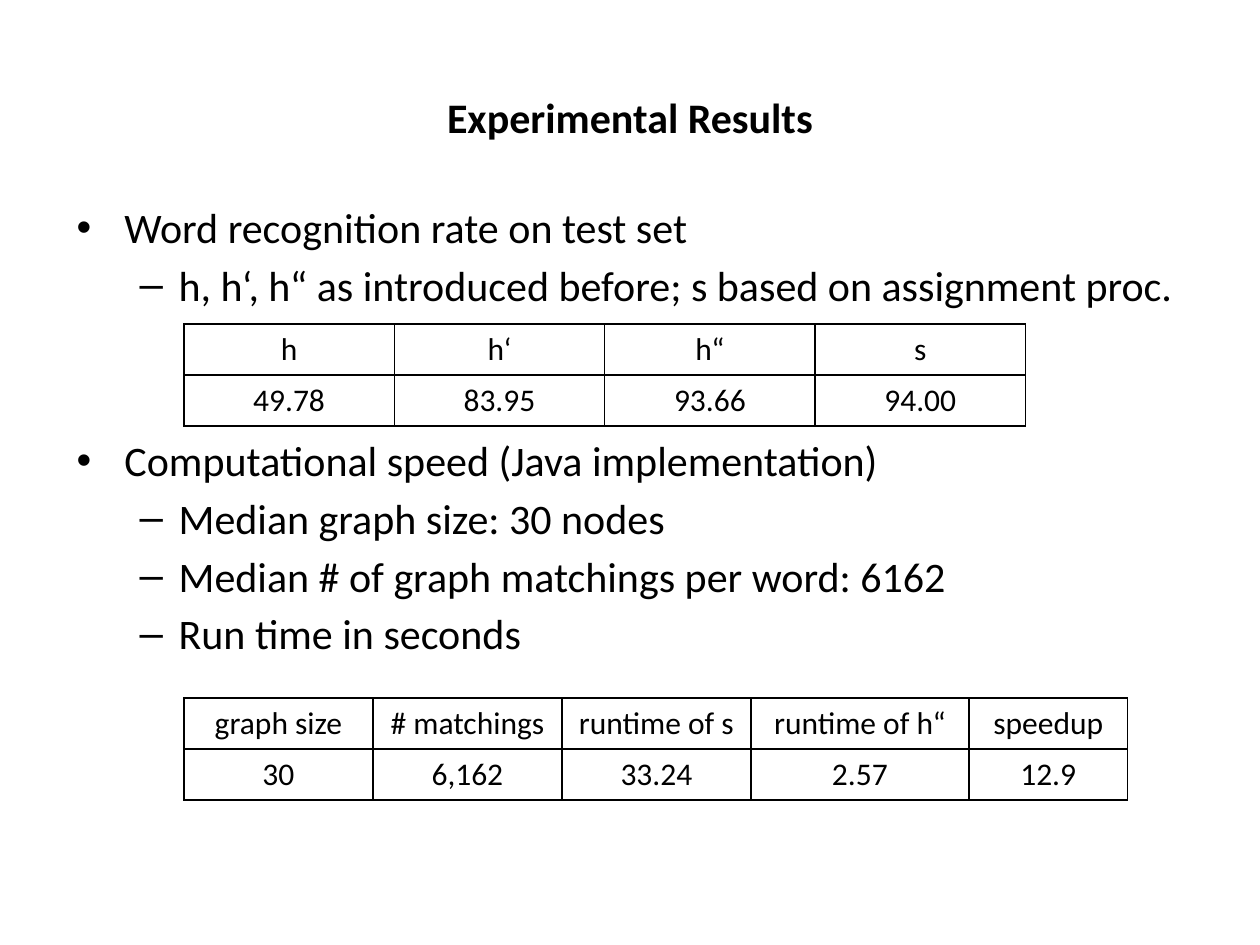
from pptx import Presentation
from pptx.dml.color import RGBColor
from pptx.enum.text import MSO_ANCHOR, PP_ALIGN
from pptx.oxml.ns import qn
from pptx.util import Inches, Pt
from lxml.etree import SubElement

COLORS = {"text": "000000", "border": "000000", "background": "FFFFFF"}
FONT = "Calibri"
BULLETS = [("•", 0.38, 0.38), ("–", 0.81, 0.31)]
LINE_GAP = 4.25
TABLE_GAP = 71.25
OUTLINE = [
    (0, "Word recognition rate on test set", LINE_GAP),
    (1, "h, h‘, h“ as introduced before; s based on assignment proc.", LINE_GAP),
    (0, "Computational speed (Java implementation)", TABLE_GAP),
    (1, "Median graph size: 30 nodes", LINE_GAP),
    (1, "Median # of graph matchings per word: 6162", LINE_GAP),
    (1, "Run time in seconds", LINE_GAP),
]
RECOGNITION_RATES = [["h", "h‘", "h“", "s"], ["49.78", "83.95", "93.66", "94.00"]]
RUN_TIMES = [
    ["graph size", "# matchings", "runtime of s", "runtime of h“", "speedup"],
    ["30", "6,162", "33.24", "2.57", "12.9"],
]


def write_text(paragraph, text, size=24, bold=False, align=PP_ALIGN.LEFT, space_before=0):
    """Write formatted text into a paragraph."""
    paragraph.alignment = align
    paragraph.space_before = Pt(space_before)
    run = paragraph.add_run()
    run.text = text
    run.font.name = FONT
    run.font.size = Pt(size)
    run.font.bold = bold
    run.font.color.rgb = RGBColor.from_string(COLORS["text"])


def set_bullet(paragraph, level):
    """Give a paragraph the bullet and hanging indent of its level."""
    character, margin, hanging = BULLETS[level]
    paragraph.level = level
    properties = paragraph._p.get_or_add_pPr()
    properties.set("marL", str(Inches(margin)))
    properties.set("indent", str(-Inches(hanging)))
    SubElement(properties, qn("a:buFont")).set("typeface", "Arial")
    SubElement(properties, qn("a:buChar")).set("char", character)


def place_title(slide, text, left, top, width, height):
    """Move the title placeholder into its box and fill it."""
    title = slide.shapes.title
    title.left, title.top, title.width, title.height = map(Inches, (left, top, width, height))
    title.text_frame.vertical_anchor = MSO_ANCHOR.MIDDLE
    write_text(title.text_frame.paragraphs[0], text, bold=True, align=PP_ALIGN.CENTER)


def add_outline(slide, items, left, top, width, height):
    """Add the two-level bulleted text."""
    frame = slide.shapes.add_textbox(*map(Inches, (left, top, width, height))).text_frame
    frame.word_wrap = True
    for index, (level, text, gap) in enumerate(items):
        paragraph = frame.add_paragraph() if index else frame.paragraphs[0]
        write_text(paragraph, text, space_before=gap)
        set_bullet(paragraph, level)


def set_borders(cell):
    """Draw a thin line on all four sides of a cell."""
    properties = cell._tc.get_or_add_tcPr()
    for position, side in enumerate(("lnL", "lnR", "lnT", "lnB")):
        line = properties.makeelement(qn(f"a:{side}"), {"w": str(Pt(1))})
        fill = SubElement(line, qn("a:solidFill"))
        SubElement(fill, qn("a:srgbClr")).set("val", COLORS["border"])
        properties.insert(position, line)


def add_grid(slide, rows, left, top, column_widths, row_height=0.405):
    """Add a bordered table of centred values."""
    size = map(Inches, (left, top, sum(column_widths), row_height * len(rows)))
    table = slide.shapes.add_table(len(rows), len(column_widths), *size).table
    table.first_row = table.horz_banding = False
    for column, width in zip(table.columns, column_widths):
        column.width = Inches(width)
    for row_index, values in enumerate(rows):
        for column_index, value in enumerate(values):
            cell = table.cell(row_index, column_index)
            cell.fill.solid()
            cell.fill.fore_color.rgb = RGBColor.from_string(COLORS["background"])
            write_text(cell.text_frame.paragraphs[0], value, size=18, align=PP_ALIGN.CENTER)
            set_borders(cell)


def main():
    """Build the results slide and save it."""
    presentation = Presentation()
    presentation.slide_width, presentation.slide_height = Inches(10), Inches(7.5)
    slide = presentation.slides.add_slide(presentation.slide_layouts[5])
    place_title(slide, "Experimental Results", 0.5, 0.3, 9, 1.25)
    add_outline(slide, OUTLINE, 0.51, 1.55, 9, 5.43)
    add_grid(slide, RECOGNITION_RATES, 1.46, 2.57, [1.67] * 4)
    add_grid(slide, RUN_TIMES, 1.46, 5.54, [1.5, 1.5, 1.5, 1.73, 1.26])
    presentation.save("out.pptx")


if __name__ == "__main__":
    main()
